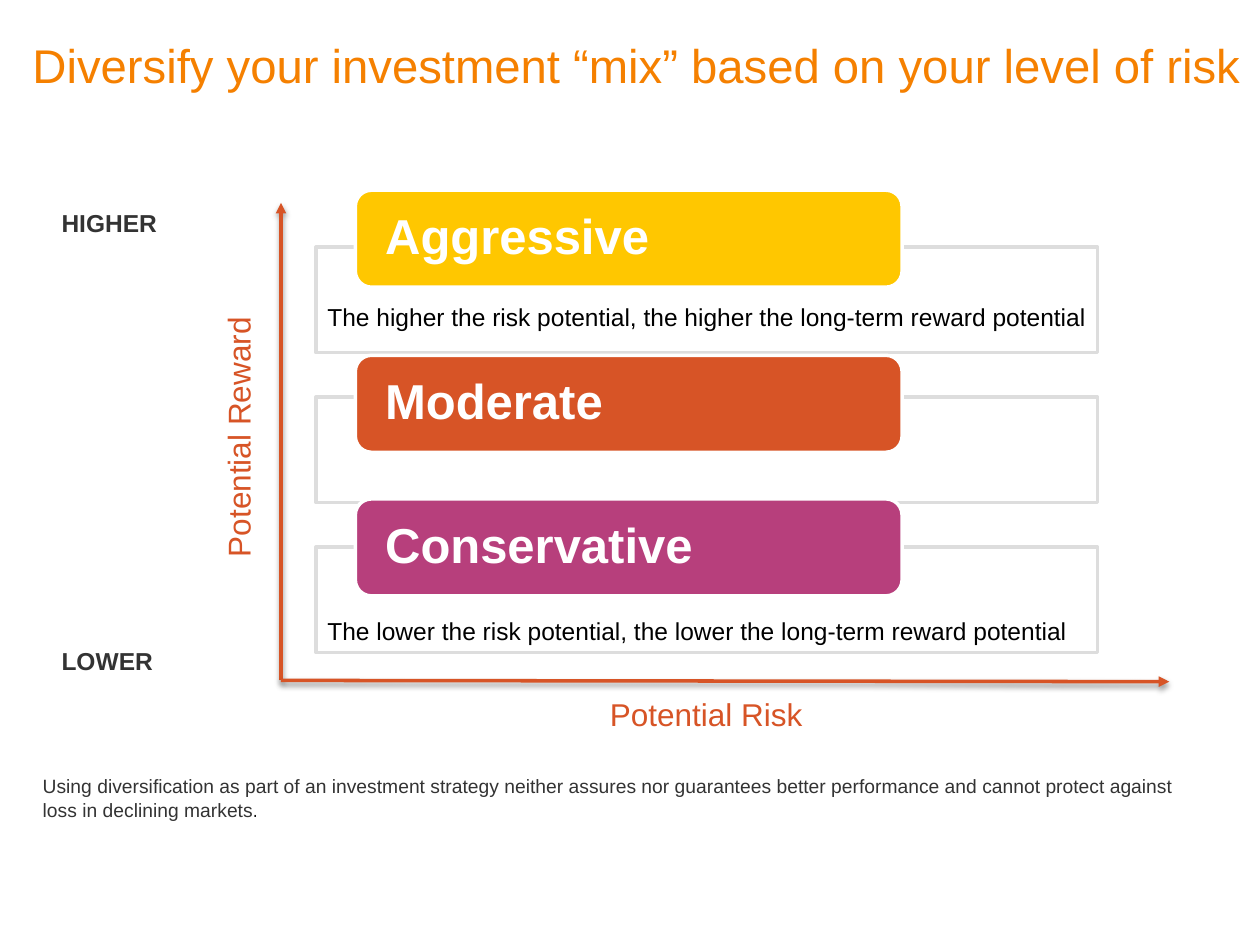
import pptx
import pptx.dml.color
import pptx.enum.shapes
import pptx.enum.text
import pptx.oxml
import pptx.oxml.ns
import pptx.util
from lxml import etree

RGBColor = pptx.dml.color.RGBColor
SHAPE = pptx.enum.shapes.MSO_SHAPE
ALIGN = pptx.enum.text.PP_ALIGN
ANCHOR = pptx.enum.text.MSO_ANCHOR

ORANGE = RGBColor(0xF5, 0x80, 0x00)
YELLOW = RGBColor(0xFF, 0xC7, 0x00)
RUST = RGBColor(0xD7, 0x54, 0x26)
MAGENTA = RGBColor(0xB7, 0x3F, 0x7C)
CHARCOAL = RGBColor(0x33, 0x33, 0x33)
SILVER = RGBColor(0xDD, 0xDD, 0xDD)
WHITE = RGBColor(0xFF, 0xFF, 0xFF)
BLACK = RGBColor(0x00, 0x00, 0x00)

COLUMNS, ROWS = 100, 75  # grid over the 10 x 7.5 inch slide

AXIS_SHADOW = (
    f'<a:effectLst {pptx.oxml.ns.nsdecls("a")}>'
    '<a:outerShdw blurRad="39370" dist="20320" dir="5400000" rotWithShape="0">'
    '<a:srgbClr val="000000"><a:alpha val="38000"/></a:srgbClr>'
    '</a:outerShdw></a:effectLst>'
)


class RiskSlide:
    """Holds the style and the slide; lengths are grid columns and rows."""

    font = "Arial"
    line_width = pptx.util.Pt(2)

    def __init__(self, deck):
        self.shapes = deck.slides.add_slide(deck.slide_layouts[6]).shapes
        self.column = deck.slide_width / COLUMNS
        self.row = deck.slide_height / ROWS

    def place(self, left, top, width, height):
        return (round(left * self.column), round(top * self.row),
                round(width * self.column), round(height * self.row))

    def set_text(self, frame, text, size, color, bold=False, align=ALIGN.LEFT):
        paragraph = frame.paragraphs[0]
        paragraph.text = text
        paragraph.alignment = align
        paragraph.font.name = self.font
        paragraph.font.size = pptx.util.Pt(size)
        paragraph.font.bold = bold
        paragraph.font.color.rgb = color
        return paragraph

    def label(self, box, text, size, color, bold=False, align=ALIGN.LEFT,
              anchor=ANCHOR.TOP, rotation=0, wrap=True):
        textbox = self.shapes.add_textbox(*self.place(*box))
        textbox.rotation = rotation
        textbox.text_frame.word_wrap = wrap
        textbox.text_frame.vertical_anchor = anchor
        return self.set_text(textbox.text_frame, text, size, color, bold, align)

    def block(self, kind, box, fill, line):
        block = self.shapes.add_shape(kind, *self.place(*box))
        block.shadow.inherit = False
        block.fill.solid()
        block.fill.fore_color.rgb = fill
        block.line.color.rgb = line
        block.line.width = self.line_width
        return block

    def frame(self, box):
        frame = self.block(SHAPE.RECTANGLE, box, WHITE, SILVER)
        fill = frame._element.spPr.find(pptx.oxml.ns.qn("a:solidFill"))
        etree.SubElement(fill[0], pptx.oxml.ns.qn("a:alpha"), val="90000")

    def heading(self, box, text, fill):
        heading = self.block(SHAPE.ROUNDED_RECTANGLE, box, fill, WHITE)
        frame = heading.text_frame
        frame.word_wrap = True
        frame.vertical_anchor = ANCHOR.MIDDLE
        frame.margin_left = frame.margin_right = pptx.util.Inches(0.2)
        frame.margin_top = frame.margin_bottom = pptx.util.Inches(0.04)
        self.set_text(frame, text, 28, WHITE, bold=True).line_spacing = 0.9

    def axis(self, start, end):
        axis = self.shapes.add_connector(
            pptx.enum.shapes.MSO_CONNECTOR.STRAIGHT,
            *self.place(*start, *end))
        axis.line.color.rgb = RUST
        axis.line.width = self.line_width
        properties = axis._element.spPr
        etree.SubElement(properties.find(pptx.oxml.ns.qn("a:ln")),
                         pptx.oxml.ns.qn("a:tailEnd"), type="triangle")
        properties.append(pptx.oxml.parse_xml(AXIS_SHADOW))


def main():
    deck = pptx.Presentation()
    deck.slide_width = pptx.util.Inches(10)
    deck.slide_height = pptx.util.Inches(7.5)
    slide = RiskSlide(deck)

    # Title
    slide.label((1.6, 1.2, 99.7, 7.8),
                "Diversify your investment “mix” based on your level of risk",
                27, ORANGE, anchor=ANCHOR.MIDDLE)

    # Risk levels: evenly spaced frames, each with a heading over its top edge
    levels = [("Aggressive", YELLOW, 15.1),
              ("Moderate", RUST, 28.2),
              ("Conservative", MAGENTA, 39.6)]
    for index, (level, color, top) in enumerate(levels):
        slide.frame((25.1, 19.6 + 11.9 * index, 62, 8.4))
        slide.heading((28.2, top, 43.4, 7.7), level, color)

    # Ends of the reward scale
    for end, top in (("HIGHER", 16), ("LOWER", 50.8)):
        slide.label((3.9, top, 11.7, 3.4), end, 14, CHARCOAL, bold=True)

    # Disclaimer
    disclaimer = slide.label(
        (2.4, 61, 94.8, 4.7),
        "Using diversification as part of an investment strategy neither "
        "assures nor guarantees better performance and cannot protect against "
        "loss in declining markets", 11, CHARCOAL)
    full_stop = disclaimer.add_run()
    full_stop.text = "."
    full_stop.font.name = "Arial Narrow"
    full_stop.font.color.rgb = BLACK

    # Notes on the two extremes
    for degree, top in (("higher", 23.5), ("lower", 48.4)):
        slide.label((25, top, 62.3, 3.4),
                    f"The {degree} the risk potential, the {degree} "
                    "the long-term reward potential", 14, BLACK)

    # Axes with their names
    origin = (22.3, 54)
    slide.axis(origin, (22.3, 16.1))
    slide.axis(origin, (92.8, 54.1))
    slide.label((8.3, 32.6, 21.2, 4), "Potential Reward", 18, RUST,
                rotation=270, wrap=False)
    slide.label((25, 54.7, 62.1, 4), "Potential Risk", 18, RUST,
                align=ALIGN.CENTER)

    deck.save("out.pptx")


if __name__ == "__main__":
    main()
